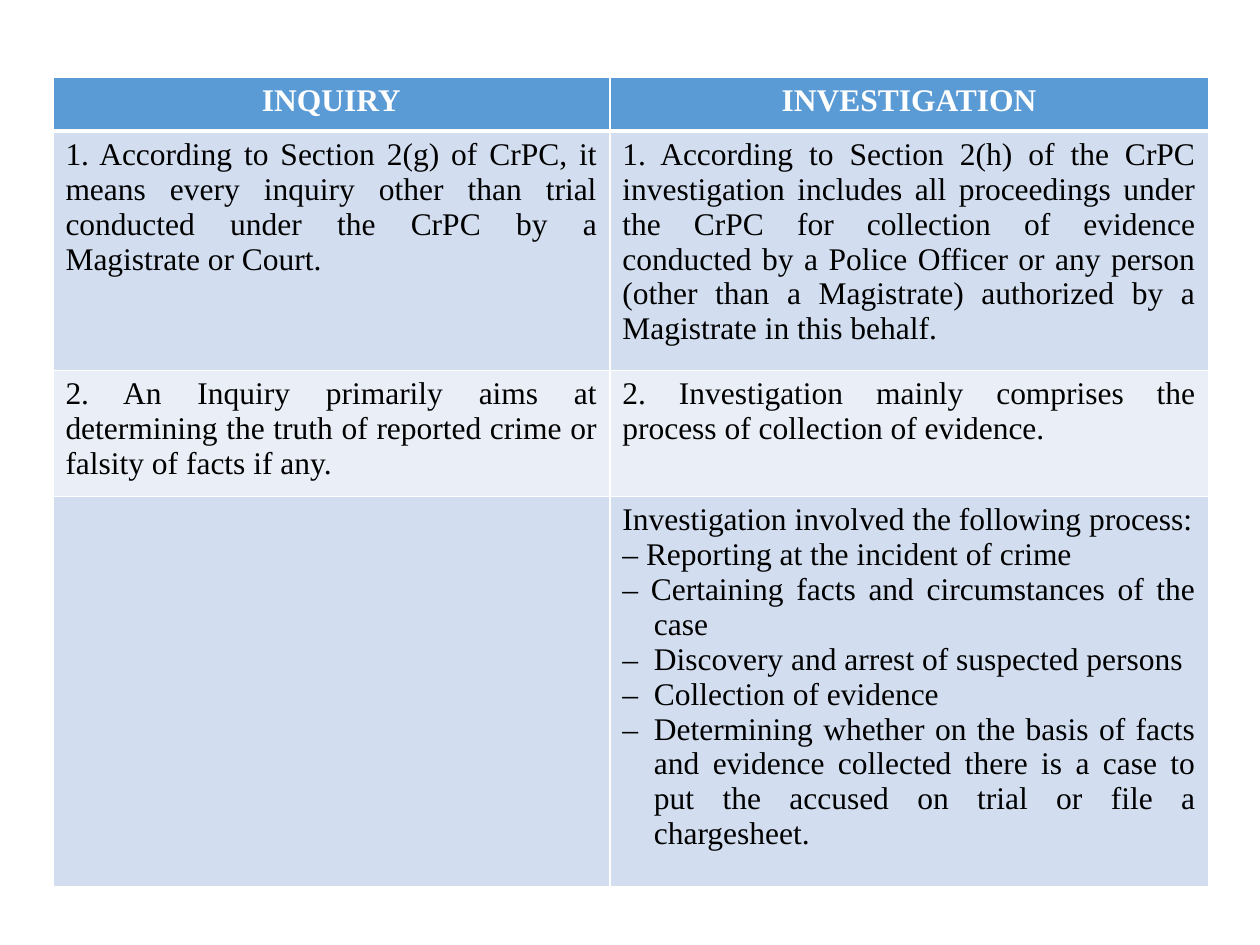
import pptx
import pptx.dml.color
import pptx.enum.text
import pptx.oxml
import pptx.oxml.ns
import pptx.util

Inches = pptx.util.Inches
Pt = pptx.util.Pt
ALIGN = pptx.enum.text.PP_ALIGN

COLORS = {
    "header": "5B9BD5",
    "band_dark": "D2DEEF",
    "band_light": "EAEFF7",
    "border": "FFFFFF",
    "header_text": "FFFFFF",
    "body_text": "000000",
}


def rgb(name):
    return pptx.dml.color.RGBColor.from_string(COLORS[name])


def set_borders(cell, widths):
    """Put the four border lines in front of the cell fill."""
    tc_pr = cell._tc.get_or_add_tcPr()
    for i, (side, width) in enumerate(widths.items()):
        tc_pr.insert(i, pptx.oxml.parse_xml(
            f'<a:ln{side} {pptx.oxml.ns.nsdecls("a")} w="{Pt(width)}">'
            f'<a:solidFill><a:srgbClr val="{COLORS["border"]}"/></a:solidFill>'
            f'</a:ln{side}>'))


# Each cell is a list of paragraphs; those starting with a dash hang
rows = [
    [["INQUIRY"], ["INVESTIGATION"]],
    [
        ["1. According to Section 2(g) of CrPC, it means every inquiry other "
         "than trial conducted under the CrPC by a Magistrate or Court."],
        ["1. According to Section 2(h) of the CrPC investigation includes all "
         "proceedings under the CrPC for collection of evidence conducted by "
         "a Police Officer or any person (other than a Magistrate) authorized "
         "by a Magistrate in this behalf."],
    ],
    [
        ["2. An Inquiry primarily aims at determining the truth of reported "
         "crime or falsity of facts if any."],
        ["2. Investigation mainly comprises the process of collection of "
         "evidence."],
    ],
    [
        [],
        ["Investigation involved the following process:",
         "– Reporting at the incident of crime",
         "– Certaining facts and circumstances of the case",
         "–\tDiscovery and arrest of suspected persons",
         "–\tCollection of evidence",
         "–\tDetermining whether on the basis of facts and evidence collected "
         "there is a case to put the accused on trial or file a chargesheet."],
    ],
]
col_widths = [4.42, 4.75]
row_heights = [0.43, 1.9, 1, 3.1]
fills = ["header", "band_dark", "band_light", "band_dark"]

# Slide
prs = pptx.Presentation()
prs.slide_width, prs.slide_height = Inches(10), Inches(7.5)
s = prs.slides.add_slide(prs.slide_layouts[6])

# Comparison table
table = s.shapes.add_table(
    len(rows), len(col_widths), Inches(0.42), Inches(0.61),
    Inches(sum(col_widths)), Inches(sum(row_heights))).table
for col, width in zip(table.columns, col_widths):
    col.width = Inches(width)
for row, height in zip(table.rows, row_heights):
    row.height = Inches(height)

# Cells
for i, row in enumerate(rows):
    is_header = i == 0
    for j, paragraphs in enumerate(row):
        cell = table.cell(i, j)
        cell.fill.solid()
        cell.fill.fore_color.rgb = rgb(fills[i])
        set_borders(cell, {"L": 1, "R": 1, "T": 3 if i == 1 else 1,
                           "B": 3 if is_header else 1})
        tf = cell.text_frame
        for k, text in enumerate(paragraphs):
            p = tf.paragraphs[0] if k == 0 else tf.add_paragraph()
            p.alignment = ALIGN.CENTER if is_header else ALIGN.JUSTIFY
            if text.startswith("–"):
                p_pr = p._p.get_or_add_pPr()
                p_pr.set("marL", str(Inches(0.25)))
                p_pr.set("indent", str(-Inches(0.25)))
            r = p.add_run()
            r.text = text
            r.font.name = "Times New Roman"
            r.font.size = Pt(18)
            r.font.bold = is_header
            r.font.color.rgb = rgb("header_text" if is_header else "body_text")

prs.save("out.pptx")
